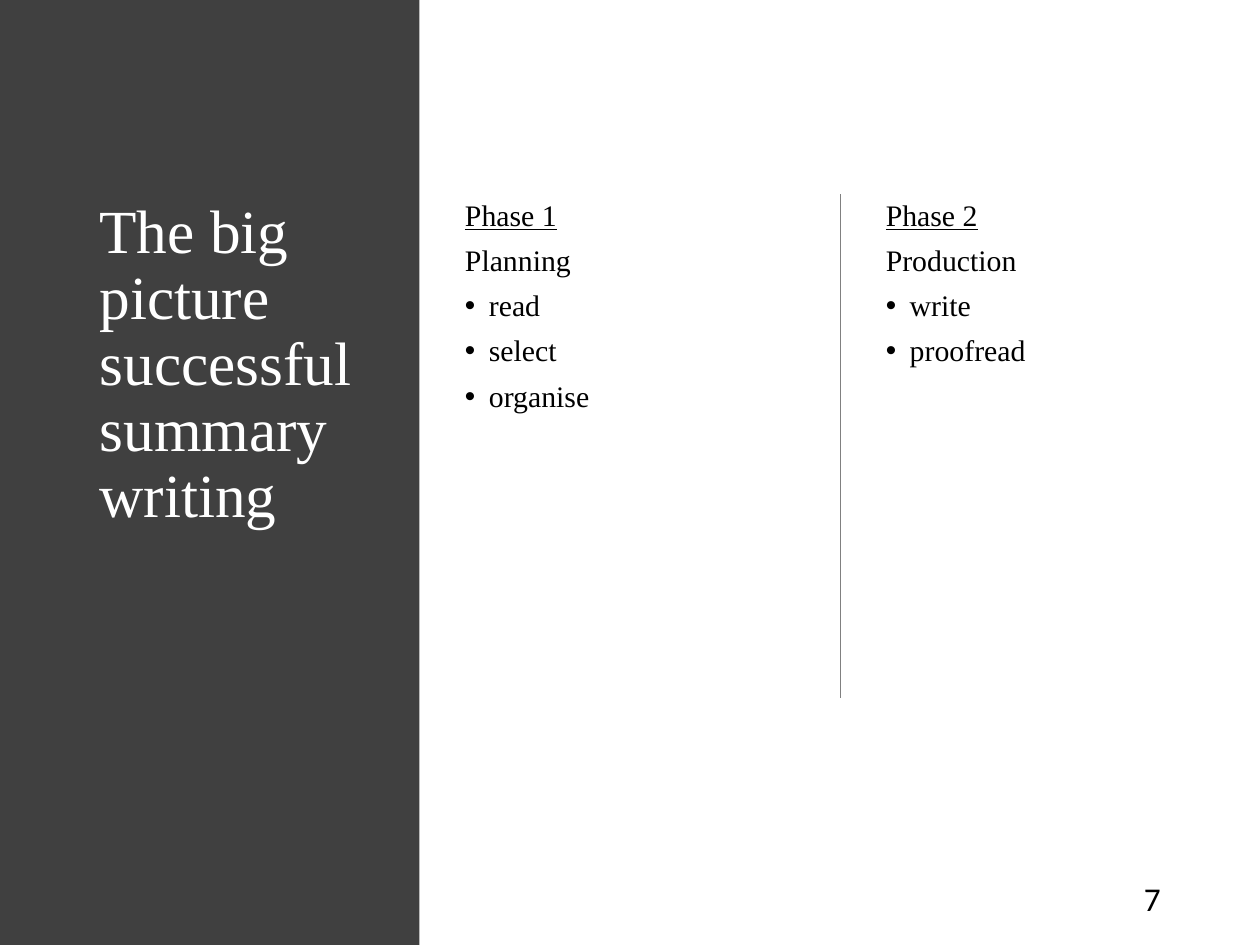
from dataclasses import dataclass

from lxml.etree import SubElement
from pptx import Presentation
from pptx.dml.color import RGBColor
from pptx.enum.shapes import MSO_CONNECTOR, MSO_SHAPE
from pptx.enum.text import MSO_ANCHOR, MSO_AUTO_SIZE, PP_ALIGN
from pptx.oxml.ns import qn
from pptx.util import Inches, Pt


@dataclass(frozen=True)
class Theme:
    panel: RGBColor = RGBColor(0x40, 0x40, 0x40)
    divider: RGBColor = RGBColor(0x80, 0x80, 0x80)
    light: RGBColor = RGBColor(0xFF, 0xFF, 0xFF)
    dark: RGBColor = RGBColor(0x00, 0x00, 0x00)
    serif: str = "Times New Roman"
    sans: str = "Calibri"
    title_size: Pt = Pt(35)
    body_size: Pt = Pt(17)
    number_size: Pt = Pt(19)


theme = Theme()
CONTENT_TOP = 1.54
CONTENT_HEIGHT = 4.77


def place(box, left, top, width, height, anchor=MSO_ANCHOR.TOP):
    """Position a text shape and make it wrap at a fixed size."""
    box.left, box.top = Inches(left), Inches(top)
    box.width, box.height = Inches(width), Inches(height)
    frame = box.text_frame
    frame.word_wrap = True
    frame.auto_size = MSO_AUTO_SIZE.NONE
    frame.vertical_anchor = anchor
    return frame


def format_para(para, font, size, color, align=PP_ALIGN.LEFT):
    para.alignment = align
    para.line_spacing = 0.9
    for span in para.runs:
        span.font.name = font
        span.font.size = size
        span.font.color.rgb = color


deck = Presentation()
deck.slide_width, deck.slide_height = Inches(10), Inches(7.5)
page = deck.slides.add_slide(deck.slide_layouts.get_by_name("Two Content"))
title, *columns = page.placeholders

# Dark side panel, sent behind the title
panel = page.shapes.add_shape(MSO_SHAPE.RECTANGLE, 0, 0, Inches(3.33), deck.slide_height)
panel.shadow.inherit = False
panel.fill.solid()
panel.fill.fore_color.rgb = theme.panel
panel.line.fill.background()
title._element.addprevious(panel._element)

title_para = place(title, 0.69, CONTENT_TOP, 2.38, CONTENT_HEIGHT).paragraphs[0]
title_para.text = "The big picture\vsuccessful summary writing"
format_para(title_para, theme.serif, theme.title_size, theme.light)

# One column per phase: heading, stage name, then bulleted steps
phases = [
    (3.59, 2.81, ["Phase 1", "Planning"], ["read", "select", "organise"]),
    (6.93, 2.62, ["Phase 2", "Production"], ["write", "proofread"]),
]
for column, (left, width, headings, steps) in zip(columns, phases):
    frame = place(column, left, CONTENT_TOP, width, CONTENT_HEIGHT)
    frame.text = "\n".join(headings + steps)
    for index, para in enumerate(frame.paragraphs):
        format_para(para, theme.serif, theme.body_size, theme.dark)
        para.space_before = Pt(7.5)
        para.runs[0].font.underline = index == 0
        properties = para._p.get_or_add_pPr()
        properties.set("marL", str(Inches(0.19)))
        properties.set("indent", str(-Inches(0.19)))
        if index < len(headings):
            SubElement(properties, qn("a:buNone"))
        else:
            SubElement(properties, qn("a:buFont"), typeface="Arial")
            SubElement(properties, qn("a:buChar"), char="•")

divider = page.shapes.add_connector(
    MSO_CONNECTOR.STRAIGHT, Inches(6.67), Inches(CONTENT_TOP), Inches(6.67), Inches(5.54)
)
divider.line.color.rgb = theme.divider
divider.line.width = Pt(1)
SubElement(divider._element.spPr, qn("a:effectLst"))

number_box = page.shapes.add_textbox(0, 0, 0, 0)
number_para = place(number_box, 7.55, 6.95, 1.76, 0.4, MSO_ANCHOR.MIDDLE).paragraphs[0]
number_para.text = "7"
format_para(number_para, theme.sans, theme.number_size, theme.dark, PP_ALIGN.RIGHT)
number_para.space_after = Pt(6)

deck.save("out.pptx")
